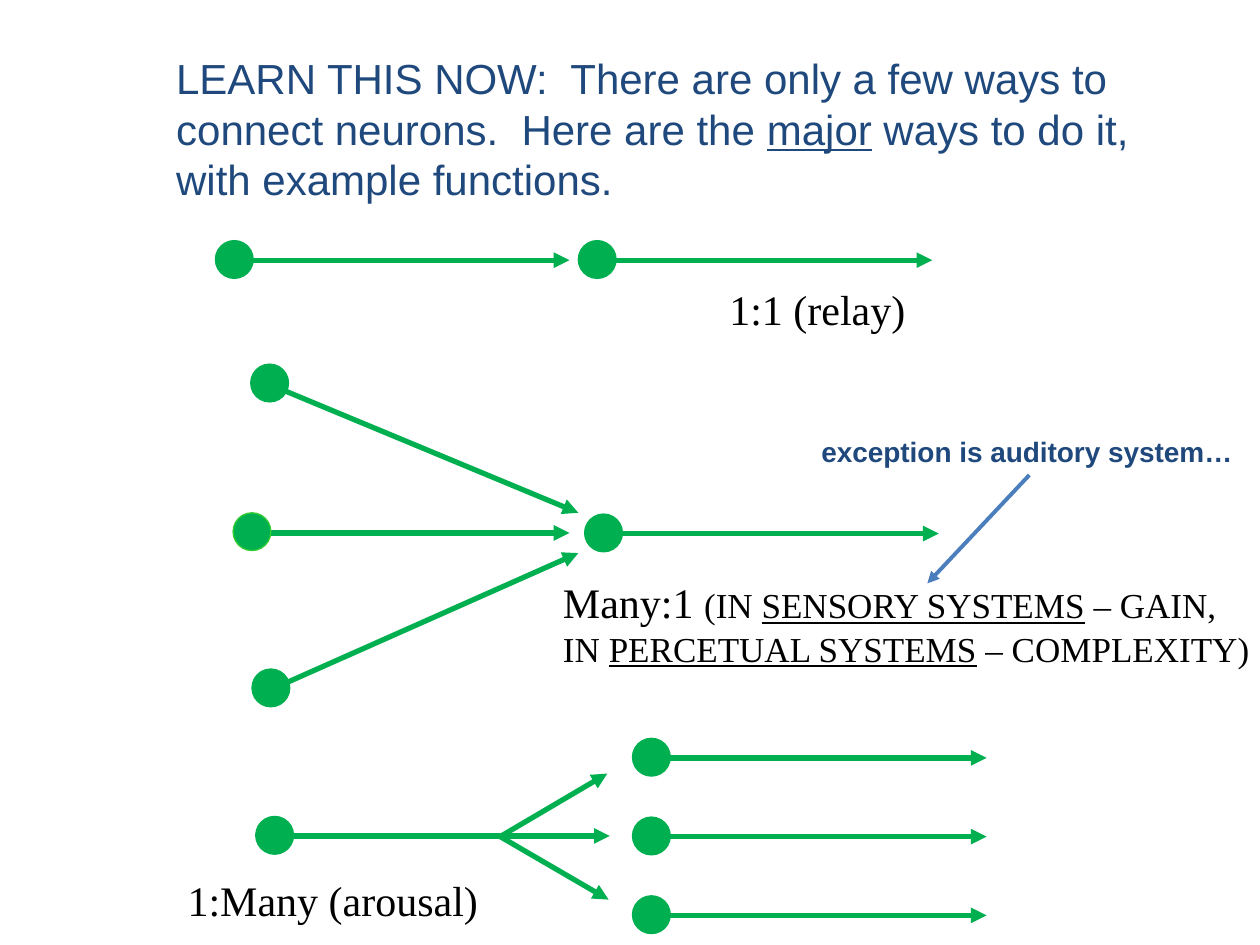
"""Build a slide showing the major ways to connect neurons."""
from typing import NamedTuple

from lxml import etree
from pptx import Presentation
from pptx.dml.color import RGBColor
from pptx.enum.shapes import MSO_CONNECTOR, MSO_SHAPE
from pptx.oxml.ns import qn
from pptx.util import Inches, Pt

STRAIGHT = MSO_CONNECTOR.STRAIGHT
OVAL = MSO_SHAPE.OVAL
GREEN = RGBColor(0x00, 0xB0, 0x50)
LIME = RGBColor(0x33, 0xCC, 0x33)
NAVY = RGBColor(0x1F, 0x49, 0x7D)
BLUE = RGBColor(0x4B, 0x7E, 0xBC)
BLACK = RGBColor(0x00, 0x00, 0x00)
SANS, SERIF = "Arial", "Times New Roman"
BODY = 0.3
AXON = 2.63


class Arrow(NamedTuple):
    x1: float
    y1: float
    x2: float
    y2: float
    color: RGBColor = GREEN
    width: float = 3


class Neuron(NamedTuple):
    left: float
    top: float
    axon: Arrow
    outline: RGBColor = GREEN


class Span(NamedTuple):
    text: str
    size: float
    underline: bool = False


class Label(NamedTuple):
    left: float
    top: float
    width: float
    height: float
    lines: list[list[Span]]
    font: str = SERIF
    color: RGBColor = BLACK
    bold: bool = False
    wrap: bool = False


def relay(left: float, top: float) -> Neuron:
    y = top + 0.155
    return Neuron(left, top, Arrow(left + 0.18, y, left + 0.18 + AXON, y))


NEURONS = [
    relay(1.71, 1.91),
    relay(4.59, 1.91),
    Neuron(1.99, 2.89, Arrow(2.16, 3.06, 4.59, 4.07)),
    Neuron(1.85, 4.07, Arrow(2.02, 4.23, 4.52, 4.23), LIME),
    Neuron(2, 5.31, Arrow(2.18, 5.46, 4.59, 4.39)),
    relay(4.64, 4.08),
    *(relay(5.02, 5.86 + 0.625 * i) for i in range(3)),
    relay(2.03, 6.48),
]

ARROWS = [
    Arrow(3.97, 6.64, 4.82, 6.14),
    Arrow(3.97, 6.64, 4.83, 7.14),
    Arrow(8.17, 3.77, 7.36, 4.63, BLUE, 2.25),
]

LABELS = [
    Label(1.3, 0.37, 7.8, 1.31, [[
        Span("LEARN THIS NOW:  There are only a few ways to connect neurons."
             "  Here are the ", 24),
        Span("major", 24, True),
        Span(" ways to do it, with example functions.", 24),
    ]], SANS, NAVY, wrap=True),
    Label(5.69, 2.2, 1.6, 0.5, [[Span("1:1 (relay)", 24)]]),
    Label(4.37, 4.53, 5.7, 0.84, [
        [Span("Many:1 ", 24), Span("(IN ", 20),
         Span("SENSORY SYSTEMS", 20, True), Span(" – GAIN,", 20)],
        [Span("IN ", 20), Span("PERCETUAL SYSTEMS", 20, True),
         Span(" – COMPLEXITY)", 20)],
    ]),
    Label(1.39, 6.89, 2.51, 0.5, [[Span("1:Many (arousal)", 24)]]),
    Label(6.42, 3.4, 3.51, 0.37,
          [[Span("exception is auditory system…", 16)]], SANS, NAVY, bold=True),
]


def draw_arrow(s, arrow: Arrow) -> None:
    cxn = s.shapes.add_connector(
        STRAIGHT, Inches(arrow.x1), Inches(arrow.y1),
        Inches(arrow.x2), Inches(arrow.y2))
    cxn.line.color.rgb = arrow.color
    cxn.line.width = Pt(arrow.width)
    etree.SubElement(cxn.line._get_or_add_ln(), qn("a:tailEnd"), type="triangle")
    etree.SubElement(cxn._element.spPr, qn("a:effectLst"))


def draw_neuron(s, neuron: Neuron) -> None:
    draw_arrow(s, neuron.axon)
    sp = s.shapes.add_shape(OVAL, Inches(neuron.left), Inches(neuron.top),
                            Inches(BODY), Inches(BODY))
    sp.shadow.inherit = False
    sp.fill.solid()
    sp.fill.fore_color.rgb = GREEN
    sp.line.color.rgb = neuron.outline
    sp.line.width = Pt(0.75)


def draw_label(s, label: Label) -> None:
    box = s.shapes.add_textbox(Inches(label.left), Inches(label.top),
                               Inches(label.width), Inches(label.height))
    tf = box.text_frame
    tf.word_wrap = label.wrap
    for i, line in enumerate(label.lines):
        p = tf.add_paragraph() if i else tf.paragraphs[0]
        p.font.name = label.font
        p.font.color.rgb = label.color
        p.font.bold = label.bold
        for span in line:
            r = p.add_run()
            r.text = span.text
            r.font.size = Pt(span.size)
            if span.underline:
                r.font.underline = True


def main() -> None:
    prs = Presentation()
    prs.slide_width, prs.slide_height = Inches(10), Inches(7.5)
    s = prs.slides.add_slide(prs.slide_layouts[6])
    for neuron in NEURONS:
        draw_neuron(s, neuron)
    for arrow in ARROWS:
        draw_arrow(s, arrow)
    for label in LABELS:
        draw_label(s, label)
    prs.save("out.pptx")


if __name__ == "__main__":
    main()
